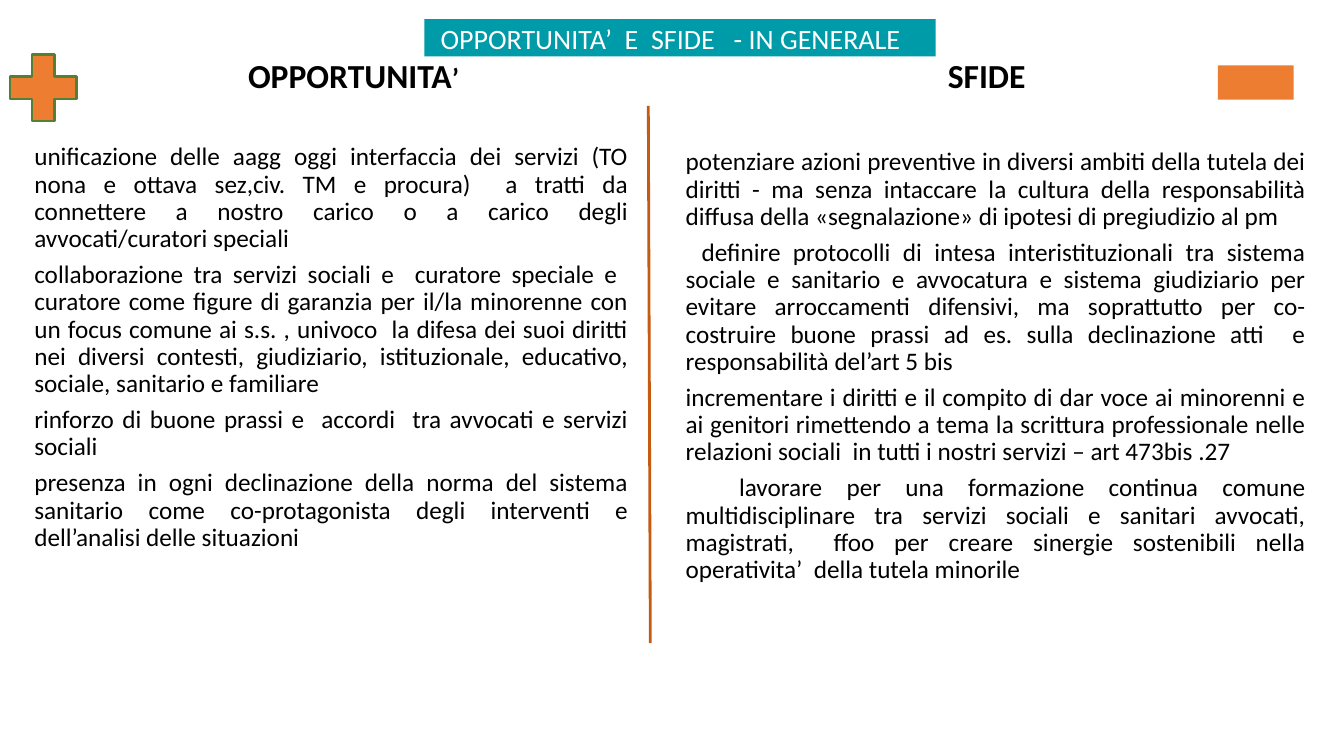
from dataclasses import dataclass

import pptx
import pptx.dml.color
import pptx.enum.shapes
import pptx.enum.text
import pptx.oxml.ns
import pptx.util
from lxml import etree

Inches = pptx.util.Inches
Pt = pptx.util.Pt
RGBColor = pptx.dml.color.RGBColor
Shapes = pptx.enum.shapes.MSO_SHAPE
Anchor = pptx.enum.text.MSO_ANCHOR
Align = pptx.enum.text.PP_ALIGN

BLACK = RGBColor(0x00, 0x00, 0x00)
WHITE = RGBColor(0xFF, 0xFF, 0xFF)
TEAL = RGBColor(0x00, 0x9B, 0xA8)
ORANGE = RGBColor(0xED, 0x7D, 0x31)
RUST = RGBColor(0xC5, 0x5A, 0x11)
GREEN = RGBColor(0x53, 0x80, 0x35)
FONT = "Calibri"
COMPARISON_LAYOUT = 4


@dataclass
class Area:
    left: float
    top: float
    width: float
    height: float

    def lengths(self) -> list[int]:
        return [Inches(n) for n in (self.left, self.top, self.width, self.height)]


@dataclass
class Point:
    text: str
    first_line: float = 0


@dataclass
class Column:
    heading_index: int
    body_index: int
    heading: list[tuple[str, int]]  # text and size of each span
    heading_area: Area
    body_area: Area
    points: list[Point]


COLUMNS = [
    Column(
        1, 2, [("OPPORTUNITA", 24), ("’", 20)],
        Area(2.46, 0.59, 3, 0.4), Area(0.34, 1.43, 5.89, 5.5),
        [
            Point("unificazione delle aagg oggi interfaccia dei servizi (TO nona e ottava sez,civ. TM e procura)  a tratti da connettere a nostro carico o a carico degli avvocati/curatori speciali"),
            Point("collaborazione tra servizi sociali e  curatore speciale e  curatore come figure di garanzia per il/la minorenne con un focus comune ai s.s. , univoco  la difesa dei suoi diritti nei diversi contesti, giudiziario, istituzionale, educativo, sociale, sanitario e familiare"),
            Point("rinforzo di buone prassi e  accordi  tra avvocati e servizi sociali"),
            Point("presenza in ogni declinazione della norma del sistema sanitario come co-protagonista degli interventi e dell’analisi delle situazioni"),
        ],
    ),
    Column(
        3, 4, [("SFIDE", 24)],
        Area(9.4, 0.59, 2, 0.4), Area(6.8, 1.48, 6.15, 5.5),
        [
            Point("potenziare azioni preventive in diversi ambiti della tutela dei diritti - ma senza intaccare la cultura della responsabilità diffusa della «segnalazione» di ipotesi di pregiudizio al pm"),
            Point("definire protocolli di intesa interistituzionali tra sistema sociale e sanitario e avvocatura e sistema giudiziario per evitare arroccamenti difensivi, ma soprattutto per co-costruire buone prassi ad es. sulla declinazione atti  e responsabilità del’art 5 bis", 0.16),
            Point("incrementare i diritti e il compito di dar voce ai minorenni e ai genitori rimettendo a tema la scrittura professionale nelle relazioni sociali  in tutti i nostri servizi – art 473bis .27"),
            Point("lavorare per una formazione continua comune multidisciplinare tra servizi sociali e sanitari avvocati, magistrati,  ffoo per creare sinergie sostenibili nella operativita’  della tutela minorile", 0.53),
        ],
    ),
]


def place(box, area: Area, anchor=Anchor.TOP, inset: float = 0):
    """Move a placeholder and return its text frame, ready for text."""
    box.left, box.top, box.width, box.height = area.lengths()
    frame = box.text_frame
    frame.auto_size = pptx.enum.text.MSO_AUTO_SIZE.NONE
    frame.word_wrap = True
    frame.vertical_anchor = anchor
    frame.margin_left = Inches(inset)
    frame.margin_top = frame.margin_right = frame.margin_bottom = 0
    return frame


def format_para(para, align, size: float, color: RGBColor, bold: bool = False,
                first_line: float = 0) -> None:
    properties = para._p.get_or_add_pPr()
    properties.set("marL", "0")
    properties.set("indent", str(Inches(first_line)))
    etree.SubElement(properties, pptx.oxml.ns.qn("a:buNone"))
    para.alignment = align
    para.line_spacing = 0.9
    para.space_before = Pt(0)
    para.space_after = Pt(size * 0.35)
    for span in para.runs:
        span.font.name = FONT
        span.font.size = Pt(size)
        span.font.bold = bold
        span.font.color.rgb = color


def add_column(page, column: Column) -> None:
    boxes = {box.placeholder_format.idx: box for box in page.placeholders}
    heading = place(boxes[column.heading_index], column.heading_area).paragraphs[0]
    for text, _ in column.heading:
        heading.add_run().text = text
    format_para(heading, Align.LEFT, 24, BLACK, bold=True)
    for span, (_, size) in zip(heading.runs, column.heading):
        span.font.size = Pt(size)

    frame = place(boxes[column.body_index], column.body_area)
    frame.text = "\n".join(point.text for point in column.points)
    for para, point in zip(frame.paragraphs, column.points):
        format_para(para, Align.JUSTIFY, 18, BLACK, first_line=point.first_line)


def add_sign(page, kind, area: Area):
    sign = page.shapes.add_shape(kind, *area.lengths())
    sign.shadow.inherit = False
    sign.fill.solid()
    sign.fill.fore_color.rgb = ORANGE
    sign.line.fill.background()
    return sign


def main() -> None:
    deck = pptx.Presentation()
    deck.slide_width, deck.slide_height = Inches(13.33), Inches(7.5)
    page = deck.slides.add_slide(deck.slide_layouts[COMPARISON_LAYOUT])

    # Title banner
    banner = page.shapes.title
    frame = place(banner, Area(4.21, 0.19, 5.07, 0.37), Anchor.MIDDLE, inset=0.16)
    frame.text = "OPPORTUNITA’  E  SFIDE   - IN GENERALE"
    format_para(frame.paragraphs[0], Align.LEFT, 20, WHITE)
    frame.paragraphs[0].line_spacing = 1.0
    frame.paragraphs[0].space_after = Pt(0)
    banner.fill.solid()
    banner.fill.fore_color.rgb = TEAL

    # Opportunities and challenges
    for column in COLUMNS:
        add_column(page, column)

    # Plus and minus signs
    plus = add_sign(page, Shapes.CROSS, Area(0.1, 0.54, 0.66, 0.66))
    plus.adjustments[0] = 0.33
    plus.line.color.rgb = GREEN
    plus.line.width = Pt(2)
    add_sign(page, Shapes.RECTANGLE, Area(12.08, 0.65, 0.75, 0.34))

    # Divider between the columns
    divider = page.shapes.add_connector(
        pptx.enum.shapes.MSO_CONNECTOR.STRAIGHT,
        Inches(6.43), Inches(1.05), Inches(6.45), Inches(6.38))
    divider.line.color.rgb = RUST
    divider.line.width = Pt(2)
    etree.SubElement(divider._element.spPr, pptx.oxml.ns.qn("a:effectLst"))

    deck.save("out.pptx")


if __name__ == "__main__":
    main()
